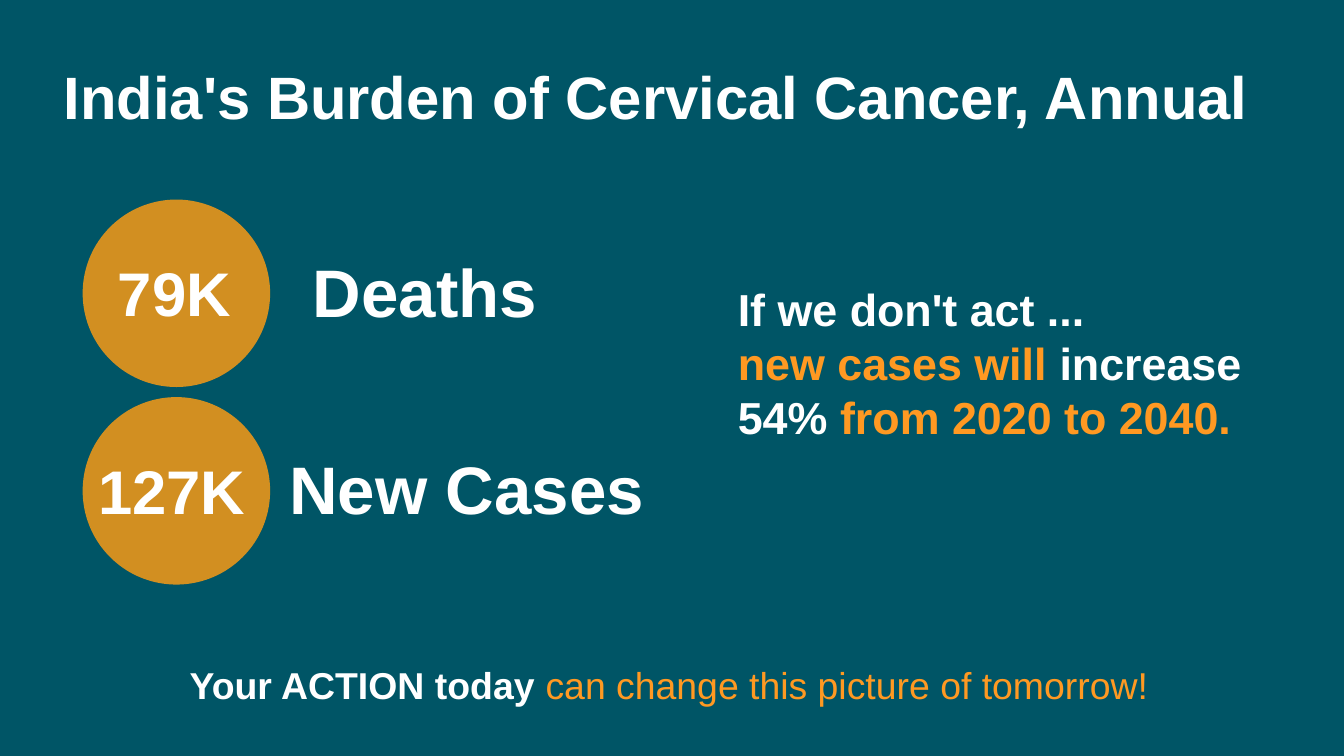
from pptx import Presentation
from pptx.dml.color import RGBColor
from pptx.enum.shapes import MSO_SHAPE
from pptx.enum.text import MSO_ANCHOR, MSO_AUTO_SIZE, PP_ALIGN
from pptx.util import Inches, Pt

TEAL = RGBColor(0x00, 0x55, 0x66)
OCHRE = RGBColor(0xD2, 0x8F, 0x21)
ORANGE = RGBColor(0xFF, 0x99, 0x22)
WHITE = RGBColor(0xFF, 0xFF, 0xFF)


class BurdenSlide:
    """Style and current slide; every area is (left, top, width, height) in percent."""

    font = "Arial"

    def __init__(self, presentation):
        self.width = presentation.slide_width
        self.height = presentation.slide_height
        self.slide = presentation.slides.add_slide(presentation.slide_layouts[5])
        background = self.slide.background.fill
        background.solid()
        background.fore_color.rgb = TEAL

    def place(self, area):
        """Turn percentages of the slide into lengths."""
        sides = (self.width, self.height) * 2
        return [round(side * share / 100) for side, share in zip(sides, area)]

    def fill_frame(self, frame, lines, size, align=PP_ALIGN.LEFT, anchor=MSO_ANCHOR.TOP):
        """Fill a frame; each line is a list of (words, colour, bold)."""
        frame.word_wrap = True
        frame.auto_size = MSO_AUTO_SIZE.NONE
        frame.vertical_anchor = anchor
        for number, line in enumerate(lines):
            paragraph = frame.paragraphs[0] if number == 0 else frame.add_paragraph()
            paragraph.alignment = align
            for words, colour, bold in line:
                run = paragraph.add_run()
                run.text = words
                run.font.name = self.font
                run.font.size = Pt(size)
                run.font.bold = bold
                run.font.color.rgb = colour

    def title(self, words, area, size):
        heading = self.slide.shapes.title
        heading.left, heading.top, heading.width, heading.height = self.place(area)
        self.fill_frame(heading.text_frame, [[(words, WHITE, True)]], size,
                        anchor=MSO_ANCHOR.MIDDLE)
        heading.text_frame.paragraphs[0].line_spacing = 0.9

    def text(self, lines, area, size, **layout):
        frame = self.slide.shapes.add_textbox(*self.place(area)).text_frame
        self.fill_frame(frame, lines, size, **layout)
        return frame

    def circle(self, area):
        disc = self.slide.shapes.add_shape(MSO_SHAPE.OVAL, *self.place(area))
        disc.shadow.inherit = False
        disc.fill.solid()
        disc.fill.fore_color.rgb = OCHRE
        disc.line.fill.background()


def main():
    presentation = Presentation()
    presentation.slide_width = Inches(13.33)
    presentation.slide_height = Inches(7.5)
    burden = BurdenSlide(presentation)

    burden.title("India's Burden of Cervical Cancer, Annual", (4, 7.2, 92, 12), 42.7)

    first_top, step = 26.4, 26.13
    figures = [
        ("79K", 6, 13.95, "Deaths", 20.03, 23.18),
        ("127K", 5.63, 14.33, "New Cases", 20.25, 28.95),
    ]
    for row, (count, count_left, count_width, label, label_left, label_width) in enumerate(figures):
        top = first_top + row * step
        burden.circle((6.15, top, 13.95, 24.8))
        burden.text([[(count, WHITE, True)]],
                    (count_left, top + 6.67, count_width, 15.5), 44, align=PP_ALIGN.CENTER)
        burden.text([[(label, WHITE, True)]],
                    (label_left, top + 6, label_width, 16.3), 48, align=PP_ALIGN.CENTER)

    burden.text(
        [
            [("If we don't act ...", WHITE, True)],
            [("new cases will ", ORANGE, True), ("increase 54% ", WHITE, True),
             ("from 2020 to 2040.", ORANGE, True)],
        ],
        (54.16, 36.53, 40.6, 22.8), 32, anchor=MSO_ANCHOR.MIDDLE)

    appeal = burden.text(
        [[("Your ACTION today", WHITE, True),
          (" can change this picture of tomorrow!", ORANGE, False)]],
        (13.13, 86.67, 86.27, 7.73), 26.7)
    appeal.margin_left = appeal.margin_right = Inches(0.13)
    appeal.margin_top = appeal.margin_bottom = Inches(0.07)

    presentation.save("out.pptx")


if __name__ == "__main__":
    main()
